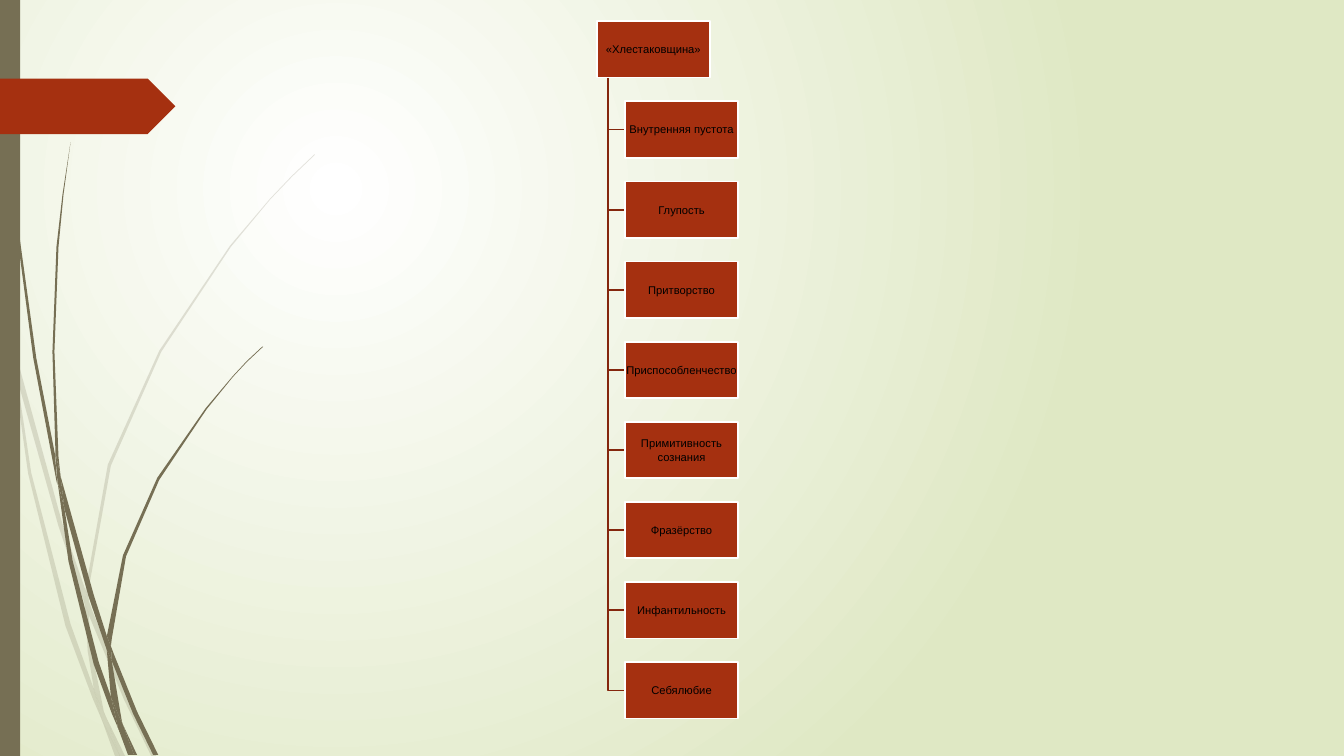
from dataclasses import dataclass

from lxml import etree
from pptx import Presentation
from pptx.dml.color import RGBColor
from pptx.enum.shapes import MSO_SHAPE
from pptx.enum.text import MSO_ANCHOR, PP_ALIGN
from pptx.oxml.ns import qn
from pptx.util import Inches, Pt

RECTANGLE = MSO_SHAPE.RECTANGLE
ARROW_TAB = MSO_SHAPE.PENTAGON
MIDDLE = MSO_ANCHOR.MIDDLE
CENTER = PP_ALIGN.CENTER


@dataclass(frozen=True)
class Theme:
    glow: str = "FFFFFF"
    meadow: str = "DFE8C4"
    stem: str = "766F54"
    accent: str = "A53010"
    branch: str = "84260D"
    outline: str = "FFFFFF"
    text: str = "000000"
    font: str = "Arial"
    node_size: float = 8
    line_width: float = 1.25
    pale_opacity: int = 20


@dataclass(frozen=True)
class Box:
    """A region of the slide, in inches."""
    left: float
    top: float
    width: float
    height: float

    def lengths(self):
        return [Inches(v) for v in (self.left, self.top, self.width, self.height)]


THEME = Theme()
ROOT = "«Хлестаковщина»"
TRAITS = [
    "Внутренняя пустота", "Глупость", "Притворство", "Приспособленчество",
    "Примитивность сознания", "Фразёрство", "Инфантильность", "Себялюбие",
]

# Outlines of the grass blades, in inches from the corner of their region
PALE_GRASS = [
    [(.11, 3.5), (.09, 3.22), (0, 2.82), (0, 2.99), (.1, 3.44)],
    [(.58, 5.22), (.84, 5.99), (.85, 5.86), (.62, 5.2), (.14, 3.45), (.17, 3.76)],
    [(.92, 6.07), (.88, 5.96), (.88, 6.1), (1.23, 6.94), (1.5, 7.5), (1.55, 7.5), (1.27, 6.92)],
    [(1.19, 7.5), (1.24, 7.5), (1.05, 7.11)],
    [(.93, 6.83), (.7, 6.19), (.31, 4.69), (.17, 3.76), (.11, 3.5), (.28, 4.7), (.65, 6.21),
     (.92, 6.93), (1.01, 7.14), (.99, 7.07)],
    [(.84, 5.99), (.87, 6.46), (.93, 6.83), (.96, 6.92), (1.05, 7.11), (1.03, 7.06),
     (.91, 6.46), (.88, 6.1), (.88, 6.08)],
    [(.88, 5.84), (1.1, 4.62), (1.6, 3.49), (2.29, 2.45), (2.68, 1.98), (2.9, 1.75),
     (3.12, 1.54), (3.12, 1.53), (2.89, 1.75), (2.68, 1.97), (2.28, 2.44), (1.58, 3.48),
     (1.07, 4.61), (.85, 5.84), (.85, 5.86), (.88, 5.96)],
    [(1.01, 7.14), (1.14, 7.5), (1.19, 7.5)],
    [(.88, 6.08), (.88, 6.1), (.88, 5.96), (.85, 5.86), (.84, 5.99)],
    [(.96, 6.92), (.93, 6.83), (.99, 7.07), (1.01, 7.14), (1.19, 7.5), (1.05, 7.11)],
]
DARK_GRASS = [
    [(.07, 1.1), (.17, 2.33), (.33, 3.55), (.56, 4.77), (.57, 4.81), (.55, 4.57), (.55, 4.53),
     (.36, 3.55), (.19, 2.32), (.08, 1.09), (.05, .48), (.04, 0), (.03, 0), (.04, .48)],
    [(.88, 5.92), (1.06, 6.45), (1.06, 6.31), (.93, 5.9), (.6, 4.72), (.64, 5.05)],
    [(1.13, 6.49), (1.1, 6.41), (1.11, 6.56), (1.32, 7.08), (1.52, 7.49), (1.57, 7.49),
     (1.36, 7.06)],
    [(1.1, 6.91), (.98, 6.57), (.72, 5.56), (.64, 5.05), (.57, 4.77), (.68, 5.57),
     (.93, 6.59), (1.11, 7.08), (1.17, 7.22), (1.16, 7.17)],
    [(.6, 4.72), (.58, 4.53), (.54, 3.49), (.58, 2.45), (.63, 1.93), (.7, 1.41),
     (.62, 1.93), (.56, 2.45), (.52, 3.49), (.55, 4.49)],
    [(1.33, 7.49), (1.36, 7.49), (1.22, 7.19)],
    [(.57, 4.77), (.64, 5.05), (.6, 4.72), (.55, 4.49), (.55, 4.53)],
    [(1.11, 6.33), (1.25, 5.52), (1.58, 4.76), (2.05, 4.06), (2.31, 3.74), (2.45, 3.59),
     (2.61, 3.44), (2.6, 3.44), (2.45, 3.58), (2.31, 3.73), (2.04, 4.05), (1.56, 4.74),
     (1.22, 5.51), (1.06, 6.31), (1.1, 6.41)],
    [(1.17, 7.22), (1.27, 7.49), (1.31, 7.49)],
    [(1.06, 6.45), (1.1, 6.91), (1.16, 7.06), (1.22, 7.19), (1.21, 7.16), (1.11, 6.56),
     (1.09, 6.51)],
    [(1.06, 6.45), (1.09, 6.51), (1.11, 6.56), (1.1, 6.41), (1.06, 6.31)],
    [(1.16, 7.06), (1.1, 6.91), (1.16, 7.17), (1.17, 7.22), (1.3, 7.49), (1.33, 7.49),
     (1.22, 7.19)],
]


def color(value):
    return RGBColor.from_string(value)


def style(shape, fill=None, line=None, opacity=100):
    shape.shadow.inherit = False
    if fill:
        shape.fill.solid()
        shape.fill.fore_color.rgb = color(fill)
    else:
        shape.fill.background()
    if line:
        shape.line.color.rgb = color(line)
        shape.line.width = Pt(THEME.line_width)
    else:
        shape.line.fill.background()
    if opacity < 100:
        tint = shape.fill._xPr.find(qn("a:solidFill"))[0]
        etree.SubElement(tint, qn("a:alpha"), val=str(opacity * 1000))


def write(shape, text, *, size, ink, align=CENTER, anchor=MIDDLE, inset=0):
    frame = shape.text_frame
    frame.word_wrap = True
    frame.vertical_anchor = anchor
    frame.margin_left = frame.margin_right = Inches(inset)
    frame.margin_top = frame.margin_bottom = Inches(inset)
    paragraph = frame.paragraphs[0]
    paragraph.alignment = align
    run = paragraph.add_run()
    run.text = text
    run.font.name = THEME.font
    run.font.size = Pt(size)
    run.font.color.rgb = color(ink)


def add_outline(shapes, box, points, close=True):
    """Draw straight segments through points measured from the corner of box."""
    start, *rest = [(Inches(box.left + x), Inches(box.top + y)) for x, y in points]
    builder = shapes.build_freeform(*start)
    builder.add_line_segments(rest, close=close)
    return builder.convert_to_shape()


def add_background(slide):
    """Fill the slide with a round glow centred in its upper left quarter."""
    fill = slide.background.fill
    fill.gradient()
    for stop, tone in zip(fill.gradient_stops, (THEME.glow, THEME.meadow)):
        stop.color.rgb = color(tone)
    gradient = slide.element.find(".//" + qn("a:gradFill"))
    gradient.remove(gradient.find(qn("a:lin")))
    glow = etree.SubElement(gradient, qn("a:path"))
    glow.set("path", "circle")
    etree.SubElement(glow, qn("a:fillToRect"), l="50000", t="50000", r="100000", b="100000")


def add_grass(slide, box, blades, opacity=100):
    group = slide.shapes.add_group_shape()
    for points in blades:
        style(add_outline(group.shapes, box, points), THEME.stem, opacity=opacity)


def add_block(shapes, kind, box, fill, line=None):
    shape = shapes.add_shape(kind, *box.lengths())
    style(shape, fill, line)
    return shape


def add_hierarchy(slide, box, root, children):
    """Hang the children under the root, indented along one trunk."""
    shapes = slide.shapes.add_group_shape().shapes
    indent, node_height = 0.28, 0.56
    node_width = box.width - indent
    trunk = node_width / 10
    pitch = (box.height - node_height) / len(children)
    for row in range(len(children), 0, -1):
        middle = row * pitch + node_height / 2
        elbow = [(trunk, node_height), (trunk, middle), (indent, middle)]
        style(add_outline(shapes, box, elbow, close=False), line=THEME.branch)
    for row, label in enumerate([root, *children]):
        left = box.left + (indent if row else 0)
        node_box = Box(left, box.top + row * pitch, node_width, node_height)
        node = add_block(shapes, RECTANGLE, node_box, THEME.accent, THEME.outline)
        write(node, label, size=THEME.node_size, ink=THEME.text)


def main():
    presentation = Presentation()
    presentation.slide_width = Inches(13.33)
    presentation.slide_height = Inches(7.5)
    slide = presentation.slides.add_slide(presentation.slide_layouts[6])
    grass_box = Box(0, 0, 3.12, 7.5)
    add_background(slide)
    add_grass(slide, grass_box, PALE_GRASS, THEME.pale_opacity)
    add_grass(slide, grass_box, DARK_GRASS)
    add_block(slide.shapes, RECTANGLE, Box(0, 0, 0.2, 7.5), THEME.stem)
    add_block(slide.shapes, ARROW_TAB, Box(0, 0.78, 1.74, 0.55), THEME.accent)
    add_hierarchy(slide, Box(5.92, 0.21, 1.4, 6.92), ROOT, TRAITS)
    presentation.save("out.pptx")


if __name__ == "__main__":
    main()
